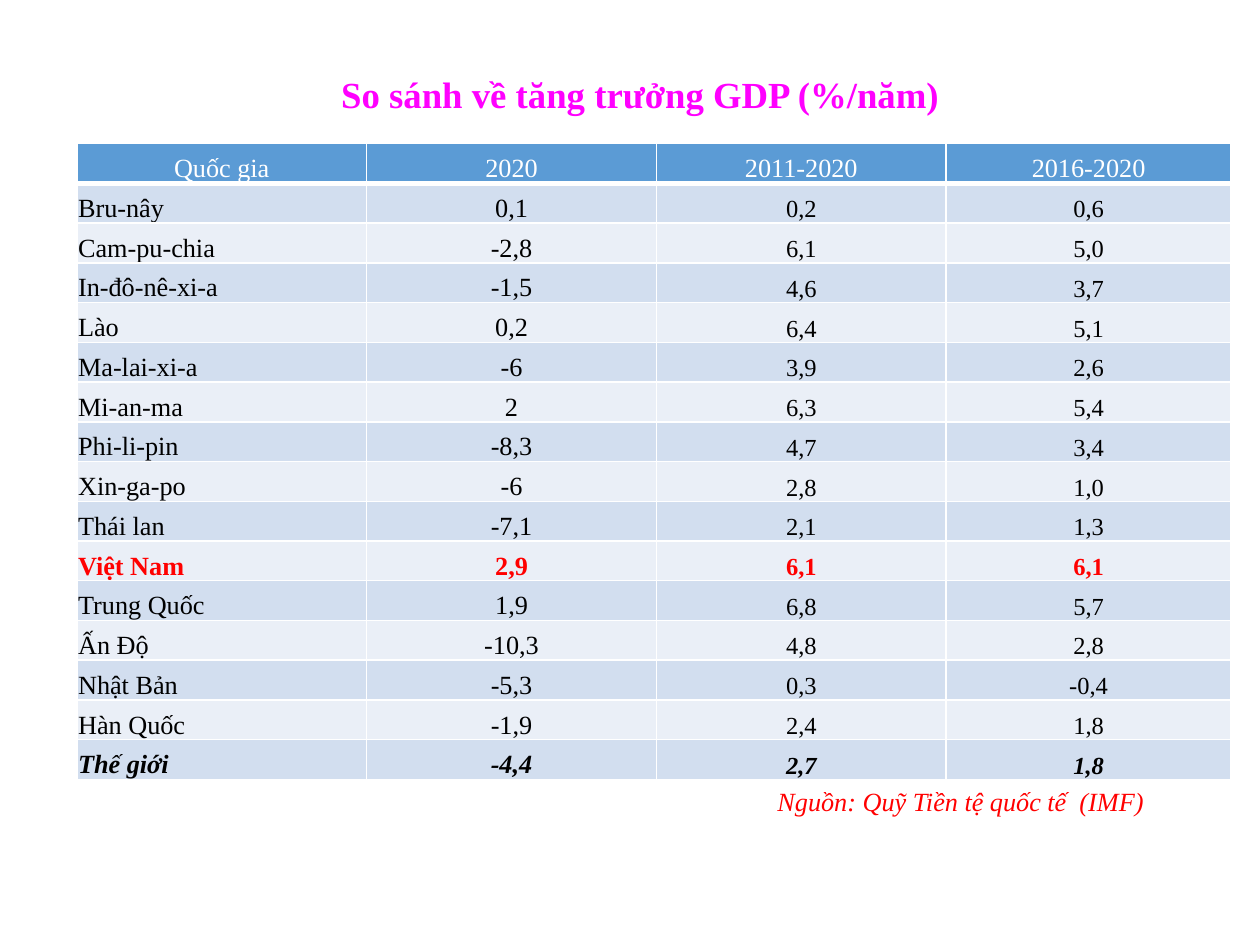
from dataclasses import dataclass

import lxml.etree
import pptx
import pptx.dml.color
import pptx.enum.shapes
import pptx.enum.text
import pptx.oxml.ns
import pptx.util

RGBColor = pptx.dml.color.RGBColor
Align = pptx.enum.text.PP_ALIGN
Anchor = pptx.enum.text.MSO_ANCHOR

WHITE = RGBColor(0xFF, 0xFF, 0xFF)
BLACK = RGBColor(0, 0, 0)
RED = RGBColor(0xFF, 0, 0)
MAGENTA = RGBColor(0xFF, 0, 0xFF)
HEADER_BLUE = RGBColor(0x5B, 0x9B, 0xD5)
BANDS = (RGBColor(0xD2, 0xDE, 0xEF), RGBColor(0xEA, 0xEF, 0xF7))

FONT = "Times New Roman"
SLIDE_WIDTH = pptx.util.Inches(10)
SLIDE_HEIGHT = pptx.util.Inches(7.5)
COLUMN_INCHES = (2.3, 2.3, 2.3, 2.26)
TABLE_INCHES = (0.61, 1.14, sum(COLUMN_INCHES), 5.05)


@dataclass(frozen=True)
class TextStyle:
    color: RGBColor = BLACK
    bold: bool = False
    italic: bool = False


@dataclass(frozen=True)
class GrowthRow:
    country: str
    year_2020: str
    decade: str
    five_years: str
    style: TextStyle = TextStyle()

    def values(self) -> tuple[str, ...]:
        return self.country, self.year_2020, self.decade, self.five_years


HEADER = GrowthRow("Quốc gia", "2020", "2011-2020", "2016-2020", TextStyle(WHITE))
COUNTRIES = [
    GrowthRow("Bru-nây", "0,1", "0,2", "0,6"),
    GrowthRow("Cam-pu-chia", "-2,8", "6,1", "5,0"),
    GrowthRow("In-đô-nê-xi-a", "-1,5", "4,6", "3,7"),
    GrowthRow("Lào", "0,2", "6,4", "5,1"),
    GrowthRow("Ma-lai-xi-a", "-6", "3,9", "2,6"),
    GrowthRow("Mi-an-ma", "2", "6,3", "5,4"),
    GrowthRow("Phi-li-pin", "-8,3", "4,7", "3,4"),
    GrowthRow("Xin-ga-po", "-6", "2,8", "1,0"),
    GrowthRow("Thái lan", "-7,1", "2,1", "1,3"),
    GrowthRow("Việt Nam", "2,9", "6,1", "6,1", TextStyle(RED, bold=True)),
    GrowthRow("Trung Quốc", "1,9", "6,8", "5,7"),
    GrowthRow("Ấn Độ", "-10,3", "4,8", "2,8"),
    GrowthRow("Nhật Bản", "-5,3", "0,3", "-0,4"),
    GrowthRow("Hàn Quốc", "-1,9", "2,4", "1,8"),
    GrowthRow("Thế giới", "-4,4", "2,7", "1,8", TextStyle(bold=True, italic=True)),
]


def set_attributes(target, values: dict) -> None:
    for name, value in values.items():
        setattr(target, name, value)


def write_text(frame, text: str, size: int, style: TextStyle, alignment: Align) -> None:
    para = frame.paragraphs[0]
    para.alignment = alignment
    span = para.add_run()
    span.text = text
    set_attributes(span.font, {
        "name": FONT,
        "size": pptx.util.Pt(size),
        "bold": style.bold,
        "italic": style.italic,
    })
    span.font.color.rgb = style.color


def add_borders(cell, bottom_points: int) -> None:
    properties = cell._tc.get_or_add_tcPr()
    for side, points in {"L": 1, "R": 1, "T": 1, "B": bottom_points}.items():
        line = lxml.etree.SubElement(
            properties, pptx.oxml.ns.qn(f"a:ln{side}"), w=str(pptx.util.Pt(points)))
        fill = lxml.etree.SubElement(line, pptx.oxml.ns.qn("a:solidFill"))
        lxml.etree.SubElement(fill, pptx.oxml.ns.qn("a:srgbClr"), val=str(WHITE))


def add_title(page) -> None:
    box = page.shapes.add_shape(
        pptx.enum.shapes.MSO_SHAPE.RECTANGLE,
        *(pptx.util.Inches(length) for length in (0.73, 0.17, 8.7, 0.97)))
    box.shadow.inherit = False
    box.fill.solid()
    box.fill.fore_color.rgb = WHITE
    box.line.fill.background()
    set_attributes(box.text_frame, {"word_wrap": True, "vertical_anchor": Anchor.MIDDLE})
    write_text(box.text_frame, "So sánh về tăng trưởng GDP (%/năm)", 21,
               TextStyle(MAGENTA, bold=True), Align.CENTER)
    box.text_frame.paragraphs[0].line_spacing = 1.5


def add_growth_table(page) -> None:
    rows = [HEADER, *COUNTRIES]
    table = page.shapes.add_table(
        len(rows), len(COLUMN_INCHES),
        *(pptx.util.Inches(length) for length in TABLE_INCHES)).table
    for column, width in zip(table.columns, COLUMN_INCHES):
        column.width = pptx.util.Inches(width)

    for row_index, row in enumerate(rows):
        is_header = row_index == 0
        for column_index, value in enumerate(row.values()):
            cell = table.cell(row_index, column_index)
            margin = pptx.util.Inches(0.01)
            set_attributes(cell, {
                "margin_left": margin,
                "margin_right": margin,
                "margin_top": margin,
                "margin_bottom": 0,
                "vertical_anchor": Anchor.BOTTOM,
            })
            add_borders(cell, 3 if is_header else 1)
            cell.fill.solid()
            cell.fill.fore_color.rgb = HEADER_BLUE if is_header else BANDS[(row_index - 1) % 2]
            # Country names sit left; the two period columns are a size smaller
            centred = is_header or column_index > 0
            size = 15 if is_header or column_index < 2 else 14
            write_text(cell.text_frame, value, size, row.style,
                       Align.CENTER if centred else Align.LEFT)


def add_source_note(page) -> None:
    box = page.shapes.add_textbox(
        *(pptx.util.Inches(length) for length in (6.1, 6.19, 3.09, 0.33)))
    set_attributes(box.text_frame, {
        "word_wrap": False,
        "auto_size": pptx.enum.text.MSO_AUTO_SIZE.SHAPE_TO_FIT_TEXT,
        "margin_left": pptx.util.Inches(0.07),
        "margin_right": pptx.util.Inches(0.07),
        "margin_top": pptx.util.Inches(0.04),
        "margin_bottom": pptx.util.Inches(0.04),
    })
    write_text(box.text_frame, "Nguồn: Quỹ Tiền tệ quốc tế  (IMF)", 15,
               TextStyle(RED, italic=True), Align.LEFT)


def main() -> None:
    deck = pptx.Presentation()
    set_attributes(deck, {"slide_width": SLIDE_WIDTH, "slide_height": SLIDE_HEIGHT})
    page = deck.slides.add_slide(deck.slide_layouts[6])
    add_title(page)
    add_growth_table(page)
    add_source_note(page)
    deck.save("out.pptx")


if __name__ == "__main__":
    main()
